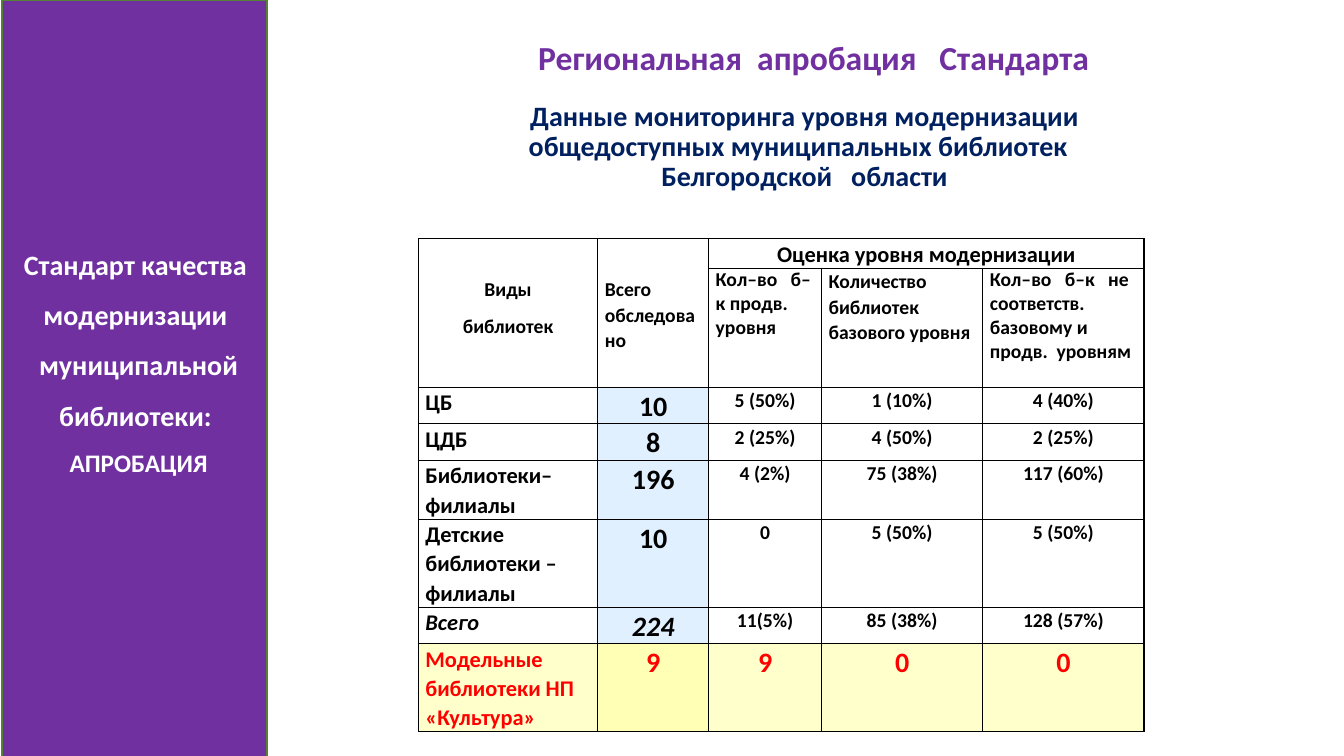
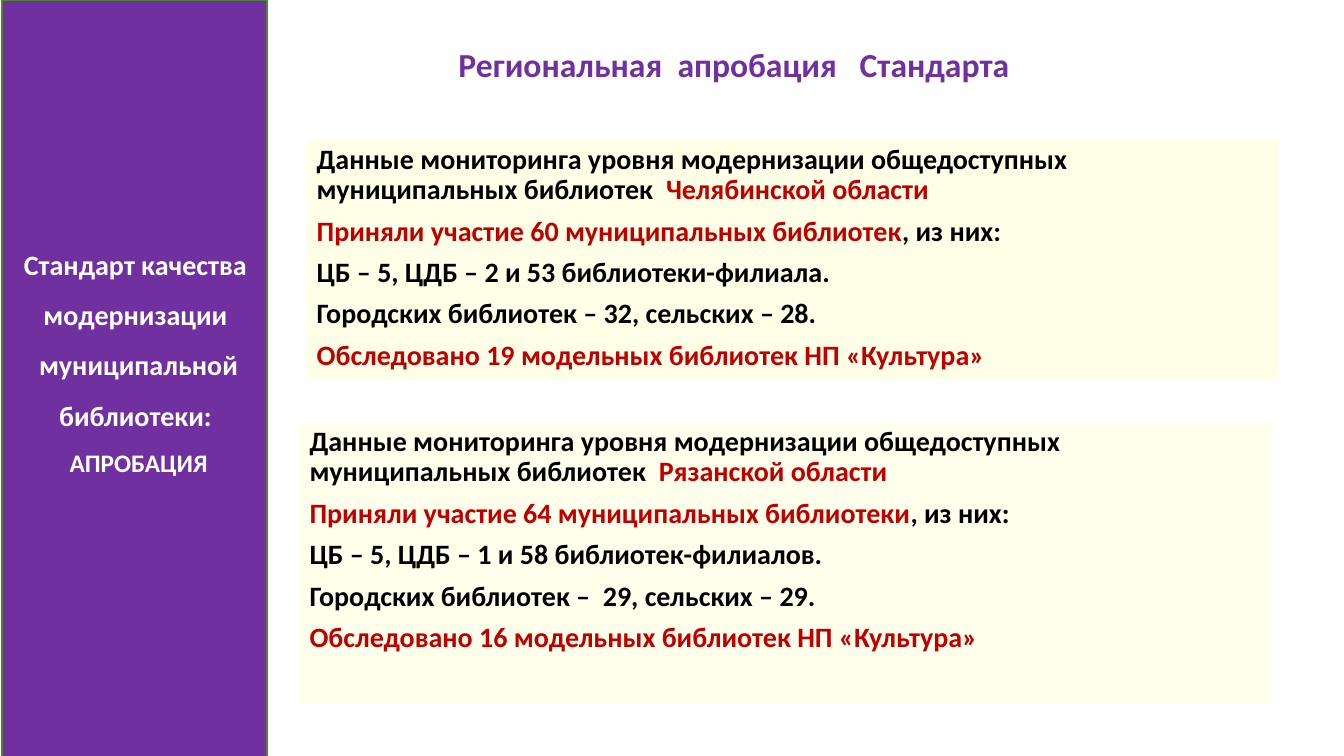
from typing import NamedTuple

from lxml import etree
from pptx import Presentation
from pptx.dml.color import RGBColor
from pptx.enum.shapes import MSO_SHAPE
from pptx.enum.text import MSO_ANCHOR, MSO_AUTO_SIZE, PP_ALIGN
from pptx.oxml.ns import qn
from pptx.util import Inches, Pt

RECTANGLE = MSO_SHAPE.RECTANGLE
TOP, MIDDLE = MSO_ANCHOR.TOP, MSO_ANCHOR.MIDDLE
NO_AUTOFIT = MSO_AUTO_SIZE.NONE
LEFT, CENTER = PP_ALIGN.LEFT, PP_ALIGN.CENTER

SLIDE_WIDTH, SLIDE_HEIGHT = Inches(13.33), Inches(7.5)
CONTENT_LAYOUT, TWO_CONTENT_LAYOUT = 1, 3
FONT = "Calibri"
PURPLE, GREEN, NAVY = "7030A0", "548235", "002060"
BLACK, WHITE, RED, DARK_RED = "000000", "FFFFFF", "FF0000", "C00000"
SKY, YELLOW, CREAM, IVORY = "99CCFF", "FFFF00", "FFFFCC", "FFFFAF"

COLUMN_WEIGHTS = (1.78, 1.1, 1.12, 1.6, 1.6)
ROW_WEIGHTS = (0.27, 1.18, 0.34, 0.34, 0.56, 0.85, 0.34, 0.85)
LIBRARY_ROWS = (
    ("ЦБ", "10", "5 (50%)", "1 (10%)", "4 (40%)"),
    ("ЦДБ", "8", "2 (25%)", "4 (50%)", "2 (25%)"),
    ("Библиотеки–филиалы", "196", "4 (2%)", "75 (38%)", "117 (60%)"),
    ("Детские  библиотеки – филиалы", "10", "0", "5 (50%)", "5 (50%)"),
    ("Всего", "224", "11(5%)", "85 (38%)", "128 (57%)"),
    ("Модельные библиотеки НП «Культура»", "9", "9", "0", "0"),
)


class Box(NamedTuple):
    """A region of the slide, in percent of its width and height."""
    left: float
    top: float
    width: float
    height: float

    def lengths(self):
        return (int(SLIDE_WIDTH * self.left / 100), int(SLIDE_HEIGHT * self.top / 100),
                int(SLIDE_WIDTH * self.width / 100), int(SLIDE_HEIGHT * self.height / 100))


def color(value):
    return RGBColor.from_string(value)


def paint(fill, properties, value, opacity=100):
    """Fill solidly; properties is the XML element that holds the fill."""
    fill.solid()
    fill.fore_color.rgb = color(value)
    if opacity < 100:
        tint = properties.find(qn("a:solidFill"))[0]
        etree.SubElement(tint, qn("a:alpha"), val=str(opacity * 1000))


def write(frame, paragraphs, size, ink=BLACK, align=LEFT, spacing=1.0, after=0,
          italic=False, indent=0):
    """Write paragraphs, each a string or a list of (text, colour) spans."""
    frame.word_wrap = True
    for index, content in enumerate(paragraphs):
        para = frame.add_paragraph() if index else frame.paragraphs[0]
        para.alignment, para.line_spacing = align, spacing
        para.space_before, para.space_after = Pt(0), Pt(after)
        font = para.font
        font.name, font.size, font.bold, font.italic = FONT, Pt(size), True, italic
        font.color.rgb = color(ink)
        spans = [(content, ink)] if isinstance(content, str) else content
        for text, span_ink in spans:
            span = para.add_run()
            span.text = text
            if span_ink != ink:
                span.font.color.rgb = color(span_ink)
        properties = para._p.get_or_add_pPr()
        properties.set("marL", str(Inches(indent)))
        properties.set("indent", "0")
        properties.find(qn("a:defRPr")).addprevious(etree.Element(qn("a:buNone")))


def place(placeholder, box):
    (placeholder.left, placeholder.top,
     placeholder.width, placeholder.height) = box.lengths()
    frame = placeholder.text_frame
    frame.auto_size, frame.vertical_anchor = NO_AUTOFIT, TOP
    return frame


def add_sidebar(page, box):
    band = page.shapes.add_shape(RECTANGLE, *box.lengths())
    band.shadow.inherit = False
    paint(band.fill, band._element.spPr, PURPLE)
    band.line.color.rgb, band.line.width = color(GREEN), Pt(1)
    frame = band.text_frame
    frame.vertical_anchor, frame.margin_bottom = MIDDLE, Inches(0.55)
    write(frame, ["Стандарт качества  модернизации  муниципальной библиотеки: ",
                  "АПРОБАЦИЯ"], 20, WHITE, CENTER, 1.5, indent=0.08)
    frame.paragraphs[-1].font.size = Pt(18)


def add_page(deck, layout, title_left, title_top):
    """Start a slide with the shared sidebar and title."""
    page = deck.slides.add_slide(deck.slide_layouts[layout])
    add_sidebar(page, Box(0.15, 0, 19.73, 100.27))
    frame = place(page.shapes.title, Box(title_left, title_top, 48.46, 6.67))
    frame.margin_left = Inches(0.54)
    write(frame, ["Региональная  апробация   Стандарта"], 24, PURPLE, CENTER)
    return page


def fill_cell(cell, paragraphs, size, background=None, opacity=100, **style):
    cell.margin_left = cell.margin_right = Inches(0.07)
    cell.margin_top = cell.margin_bottom = 0
    properties = cell._tc.get_or_add_tcPr()
    for side in ("lnL", "lnR", "lnT", "lnB"):
        border = etree.SubElement(properties, qn(f"a:{side}"), w=str(Pt(1)))
        line = etree.SubElement(border, qn("a:solidFill"))
        etree.SubElement(line, qn("a:srgbClr"), val=BLACK)
    if background:
        paint(cell.fill, properties, background, opacity)
    else:
        cell.fill.background()
    write(cell.text_frame, paragraphs, size, after=8, **{"spacing": 1.07, **style})


def fill_header(table):
    for column in (0, 1):
        table.cell(0, column).merge(table.cell(1, column))
    table.cell(0, 2).merge(table.cell(0, 4))
    headings = (
        (0, 0, ["Виды", "библиотек"], 14, {"align": CENTER}),
        (0, 1, ["Всего обследовано"], 14, {}),
        (0, 2, ["Оценка уровня модернизации"], 16, {"align": CENTER}),
        (1, 2, ["Кол–во   б–к продв. уровня"], 14, {"spacing": 1.0}),
        (1, 3, ["Количество библиотек  базового уровня"], 14, {}),
        (1, 4, ["Кол–во   б–к   не соответств. базовому и продв.  уровням"], 14,
         {"spacing": 1.0}),
    )
    for row, column, paragraphs, size, style in headings:
        fill_cell(table.cell(row, column), paragraphs, size, **style)
    for row, column in ((1, 0), (1, 1), (0, 3), (0, 4)):
        fill_cell(table.cell(row, column), [], 14)
    for column in (0, 1):
        table.cell(0, column).margin_top = Inches(0.37)


def fill_library_row(table, row, values):
    model = values is LIBRARY_ROWS[-1]
    for column, value in enumerate(values):
        background, opacity = (CREAM if model else None), 100
        if column == 1:
            background, opacity = (YELLOW if model else SKY), 29
        size = 16 if column == 0 else 20 if model or column == 1 else 14
        fill_cell(table.cell(row, column), [value], size, background, opacity,
                  ink=RED if model else BLACK, align=CENTER if column else LEFT,
                  italic=values[0] == "Всего" and column < 2)


def add_library_table(page, box):
    table = page.shapes.add_table(len(ROW_WEIGHTS), len(COLUMN_WEIGHTS),
                                  *box.lengths()).table
    table.first_row = table.horz_banding = False
    width, height = box.lengths()[2:]
    for column, weight in zip(table.columns, COLUMN_WEIGHTS):
        column.width = int(width * weight / sum(COLUMN_WEIGHTS))
    for row, weight in zip(table.rows, ROW_WEIGHTS):
        row.height = int(height * weight / sum(ROW_WEIGHTS))
    fill_header(table)
    for row, values in enumerate(LIBRARY_ROWS, start=2):
        fill_library_row(table, row, values)


def fill_region_panel(panel, box, opacity, region, participants, kinds, places, models):
    frame = place(panel, box)
    paint(panel.fill, panel._element.spPr, IVORY, opacity)
    write(frame, [
        [("Данные мониторинга уровня модернизации общедоступных "
          "муниципальных библиотек  ", BLACK), (f"{region} области", DARK_RED)],
        [(f"Приняли участие {participants}", DARK_RED), (", из них:", BLACK)],
        kinds,
        places,
        [(f"Обследовано {models} модельных библиотек НП «Культура»", DARK_RED)],
    ], 20, spacing=0.9, after=8)


def build_table_page(deck):
    page = add_page(deck, CONTENT_LAYOUT, 34.66, 4.27)
    subtitle = place(page.placeholders[1], Box(34.66, 12.8, 50.41, 13.47))
    write(subtitle, ["Данные мониторинга уровня модернизации общедоступных "
                     "муниципальных библиотек   Белгородской   области"],
          20, NAVY, CENTER, 0.9, 8)
    add_library_table(page, Box(31.13, 31.6, 54, 63.07))


def build_regions_page(deck):
    page = add_page(deck, TWO_CONTENT_LAYOUT, 28.73, 5.2)
    fill_region_panel(page.placeholders[1], Box(22.81, 18.53, 72.32, 31.6), 28,
                      "Челябинской", "60 муниципальных библиотек",
                      "ЦБ – 5, ЦДБ – 2 и 53 библиотеки-филиала.",
                      "Городских библиотек – 32, сельских – 28.", 19)
    fill_region_panel(page.placeholders[2], Box(22.28, 55.87, 72.32, 37.2), 23,
                      "Рязанской", "64 муниципальных библиотеки",
                      "ЦБ – 5, ЦДБ – 1 и 58 библиотек-филиалов.",
                      "Городских библиотек –  29, сельских – 29.", 16)


def main():
    deck = Presentation()
    deck.slide_width, deck.slide_height = SLIDE_WIDTH, SLIDE_HEIGHT
    build_table_page(deck)
    build_regions_page(deck)
    deck.save("out.pptx")


if __name__ == "__main__":
    main()
